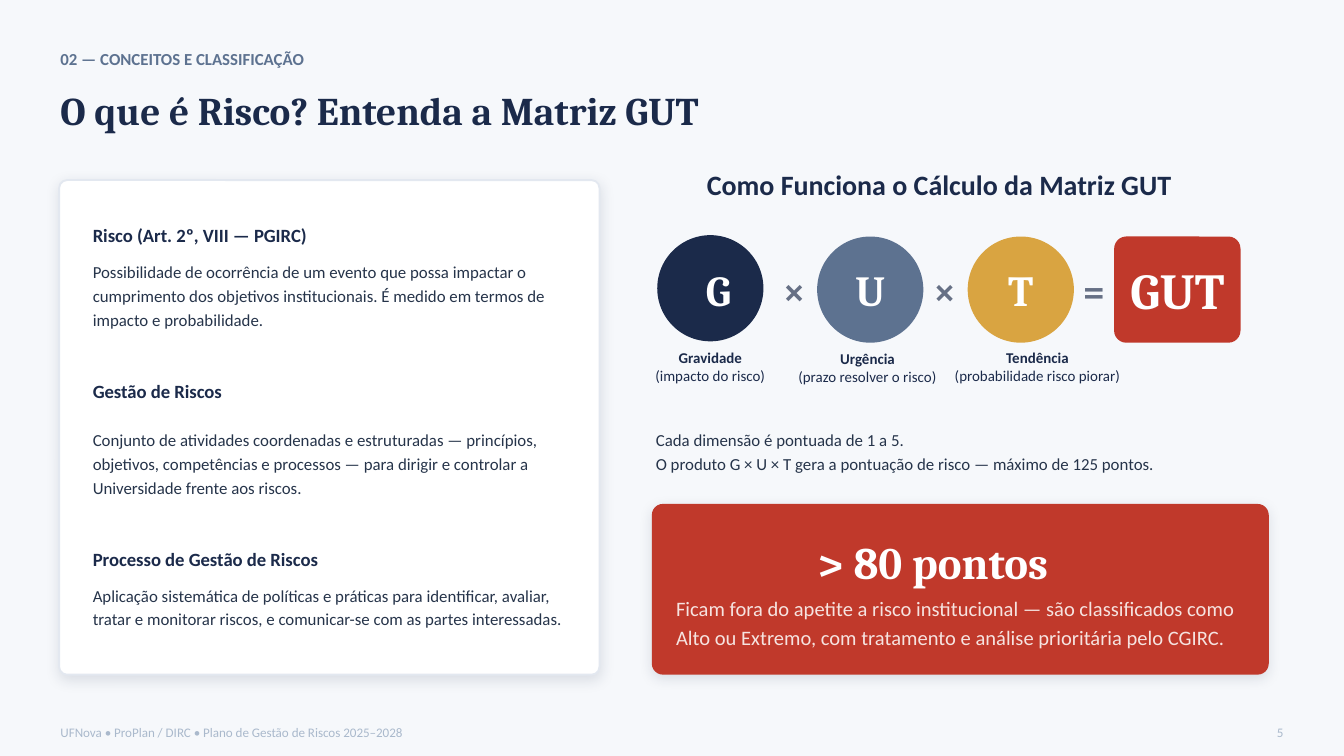
import pptx
import pptx.dml.color
import pptx.enum.shapes
import pptx.enum.text
import pptx.oxml
import pptx.oxml.ns
import pptx.util
from pptx.util import Inches

SHAPE = pptx.enum.shapes.MSO_SHAPE
ALIGN = pptx.enum.text.PP_ALIGN
NAVY, SLATE, GOLD, RED, WHITE = "1B2A4A", "5D7290", "D9A441", "C0392B", "FFFFFF"

EYEBROW = dict(size=9, bold=True, color=SLATE)
TITLE = dict(size=21, bold=True, color=NAVY, name="Cambria")
TERM = dict(size=10, bold=True, color=NAVY)
BODY = dict(size=9, color="26344A")
HEADING = dict(size=15, bold=True, color=NAVY)
LETTER = dict(size=23, bold=True, color=WHITE, name="Cambria")
OPERATOR = dict(size=20, bold=True, color="667085", name="Cambria")
PRODUCT = dict(LETTER, size=27)
FACTOR = dict(size=8, bold=True, color=NAVY)
FACTOR_NOTE = dict(FACTOR, bold=False)
LIMIT = dict(LETTER, size=24)
LIMIT_NOTE = dict(size=11, color="F6E3E0")
FOOTER = dict(size=7, color="AAB9CC")


def rgb(color):
    return pptx.dml.color.RGBColor.from_string(color)


def place(s, box):
    for name, value in zip(("left", "top", "width", "height"), box):
        setattr(s, name, Inches(value))


def write(s, lines, align=ALIGN.LEFT, spacing=None):
    """Fill a shape with (text, format) lines, one paragraph each."""
    tf = s.text_frame
    settings = dict(word_wrap=True, auto_size=pptx.enum.text.MSO_AUTO_SIZE.NONE,
                    vertical_anchor=pptx.enum.text.MSO_ANCHOR.MIDDLE,
                    margin_left=0, margin_top=0, margin_right=0, margin_bottom=0)
    for name, value in settings.items():
        setattr(tf, name, value)
    for i, (text, style) in enumerate(lines):
        p = tf.paragraphs[0] if i == 0 else tf.add_paragraph()
        p.alignment = align
        if spacing:
            p.line_spacing = spacing
        r = p.add_run()
        r.text = text
        font = dict(name="Calibri", bold=False) | style
        r.font.color.rgb = rgb(font.pop("color"))
        r.font.size = pptx.util.Pt(font.pop("size"))
        for name, value in font.items():
            setattr(r.font, name, value)


def add_text(slide, box, lines, **layout):
    s = slide.shapes.add_textbox(*map(Inches, box))
    write(s, lines, **layout)


def add_filled(slide, kind, box, fill, line=None, radius=None):
    s = slide.shapes.add_shape(kind, *map(Inches, box))
    s.shadow.inherit = False
    s.fill.solid()
    s.fill.fore_color.rgb = rgb(fill)
    if line:
        s.line.color.rgb = rgb(line)
        s.line.width = pptx.util.Pt(1)
    else:
        s.line.fill.background()
    if radius is not None:
        s.adjustments[0] = radius
    return s


def add_soft_shadow(s):
    effects = s._element.spPr.find(pptx.oxml.ns.qn("a:effectLst"))
    effects.append(pptx.oxml.parse_xml(
        f'<a:outerShdw {pptx.oxml.ns.nsdecls("a")} blurRad="{pptx.util.Pt(7)}" '
        f'dist="{pptx.util.Pt(2)}" dir="5400000" algn="ctr" rotWithShape="0">'
        f'<a:srgbClr val="{NAVY}"><a:alpha val="12000"/></a:srgbClr></a:outerShdw>'))


def add_header(slide, x, y):
    add_text(slide, (x, y, 6, 0.24), [("02 — CONCEITOS E CLASSIFICAÇÃO", EYEBROW)])
    title = slide.shapes.title
    place(title, (x, y + 0.22, 9.07, 0.56))
    write(title, [("O que é Risco? Entenda a Matriz GUT", TITLE)])


def add_definitions(slide, x, y, w, h):
    add_soft_shadow(add_filled(slide, SHAPE.ROUNDED_RECTANGLE, (x, y, w, h),
                               WHITE, "E3E8F0", 0.016))
    definitions = [
        (0.29, 0.45, 0.79, "Risco (Art. 2º, VIII — PGIRC)",
         "Possibilidade de ocorrência de um evento que possa impactar o cumprimento "
         "dos objetivos institucionais. É medido em termos de impacto e probabilidade."),
        (1.45, 1.7, 0.79, "Gestão de Riscos",
         "Conjunto de atividades coordenadas e estruturadas — princípios, objetivos, "
         "competências e processos — para dirigir e controlar a Universidade frente "
         "aos riscos."),
        (2.7, 2.79, 0.75, "Processo de Gestão de Riscos",
         "Aplicação sistemática de políticas e práticas para identificar, avaliar, "
         "tratar e monitorar riscos, e comunicar-se com as partes interessadas."),
    ]
    for term_y, body_y, body_h, term, body in definitions:
        add_text(slide, (x + 0.25, y + term_y, 3.65, 0.24), [(term, TERM)])
        add_text(slide, (x + 0.25, y + body_y, 3.65, body_h), [(body, BODY)], spacing=1.18)


def add_formula(slide, x, y):
    size = 0.79
    add_text(slide, (x + 0.37, y - 0.54, 4.67, 0.3),
             [("Como Funciona o Cálculo da Matriz GUT", HEADING)])
    # circle left and top, letter shift, label left, top and width, operator left and width
    factors = [
        ("G", NAVY, 0, -0.01, 0.06, -0.15, 0.85, 1.09,
         "Gravidade", "(impacto do risco)", "×", 0.85, 0.34),
        ("U", SLATE, 1.19, 0, 0, 1.02, 0.86, 1.09,
         "Urgência", "(prazo resolver o risco)", "×", 1.97, 0.34),
        ("T", GOLD, 2.31, 0, 0, 2.16, 0.85, 1.34,
         "Tendência", "(probabilidade risco piorar)", "=", 3.1, 0.3),
    ]
    for (letter, color, left, top, shift, label_x, label_y, label_w, name, note,
         operator, operator_x, operator_w) in factors:
        add_filled(slide, SHAPE.OVAL, (x + left, y + top, size, size), color)
        add_text(slide, (x + left + shift, y, size, size), [(letter, LETTER)],
                 align=ALIGN.CENTER)
        add_text(slide, (x + label_x, y + label_y, label_w, 0.23),
                 [(name, FACTOR), (note, FACTOR_NOTE)], align=ALIGN.CENTER)
        add_text(slide, (x + operator_x, y, operator_w, size), [(operator, OPERATOR)],
                 align=ALIGN.CENTER)
    product = (x + 3.4, y, 0.94, size)
    add_filled(slide, SHAPE.ROUNDED_RECTANGLE, product, RED, radius=0.114)
    add_text(slide, product, [("GUT", PRODUCT)], align=ALIGN.CENTER)
    add_text(slide, (x - 0.01, y + 1.32, 4.67, 0.53),
             [("Cada dimensão é pontuada de 1 a 5.", BODY),
              ("O produto G × U × T gera a pontuação de risco — máximo de 125 pontos.", BODY)],
             spacing=1.2)


def add_limit(slide, x, y, w, h):
    add_soft_shadow(add_filled(slide, SHAPE.ROUNDED_RECTANGLE, (x, y, w, h),
                               RED, radius=0.065))
    add_text(slide, (x + 1.23, y + 0.18, 4.22, 0.49), [("> 80 pontos", LIMIT)])
    add_text(slide, (x + 0.18, y + 0.59, 4.22, 0.56),
             [("Ficam fora do apetite a risco institucional — são classificados como "
               "Alto ou Extremo, com tratamento e análise prioritária pelo CGIRC.",
               LIMIT_NOTE)], spacing=1.15)


def add_footer(slide, x, y, w):
    add_text(slide, (x, y, 6.75, 0.21),
             [("UFNova • ProPlan / DIRC • Plano de Gestão de Riscos 2025–2028", FOOTER)])
    add_text(slide, (x + w - 0.38, y, 0.38, 0.21), [("5", FOOTER)], align=ALIGN.RIGHT)


def main():
    prs = pptx.Presentation()
    prs.slide_width = Inches(10)
    prs.slide_height = prs.slide_width * 9 // 16
    slide = prs.slides.add_slide(prs.slide_layouts[5])
    slide.background.fill.solid()
    slide.background.fill.fore_color.rgb = rgb("F6F8FB")
    add_header(slide, 0.45, 0.32)
    add_definitions(slide, 0.44, 1.34, 4.02, 3.68)
    add_formula(slide, 4.89, 1.76)
    add_limit(slide, 4.85, 3.75, 4.59, 1.27)
    add_footer(slide, 0.45, 5.34, 9.1)
    prs.save("out.pptx")


if __name__ == "__main__":
    main()
